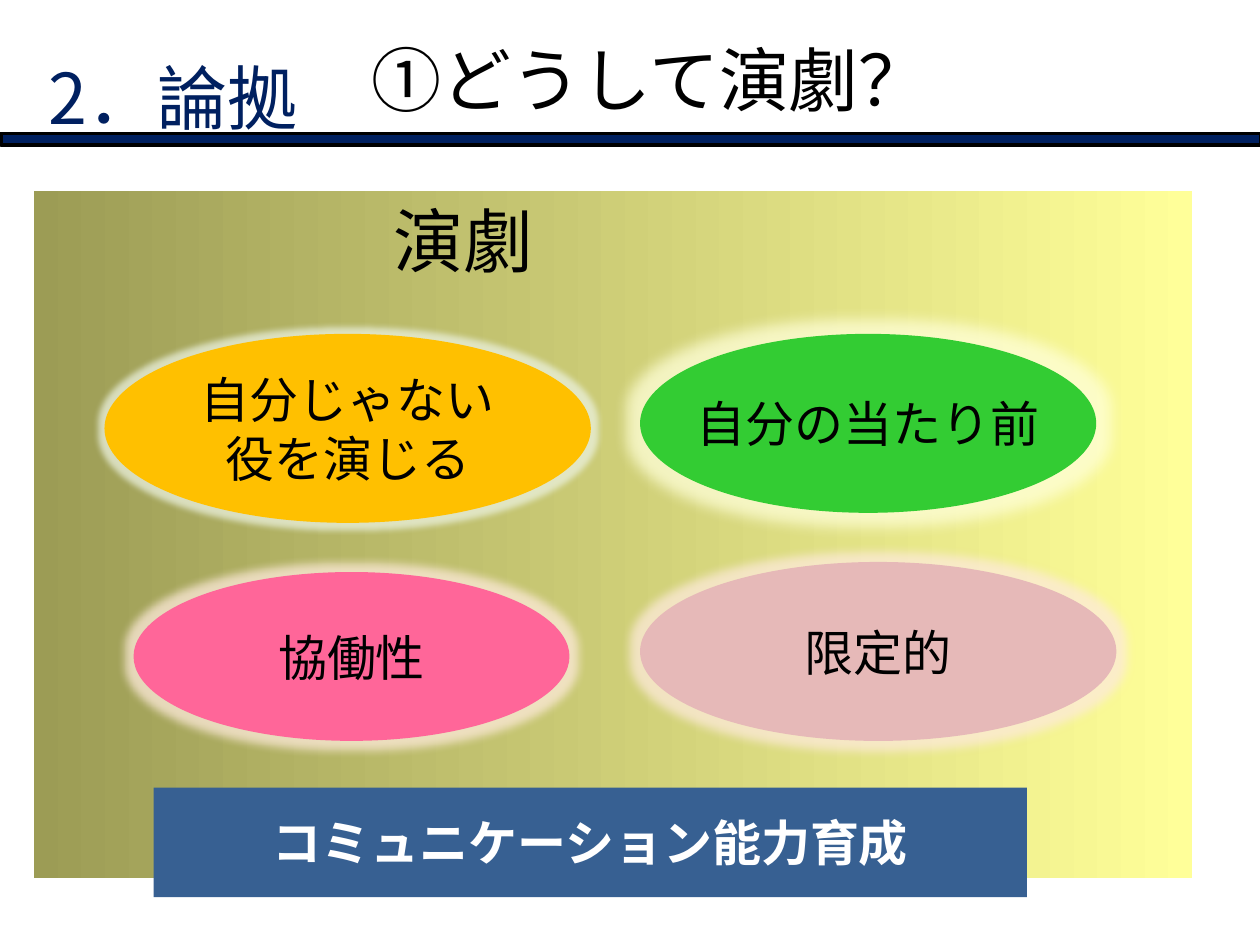
from lxml import etree
from pptx import Presentation
from pptx import util as u
from pptx.dml.color import RGBColor
from pptx.enum import shapes, text
from pptx.oxml.ns import qn

W, H = 10, 7.5
HUE = {
    "ink": "000000", "navy": "002060", "white": "FFFFFF", "blue": "376092",
    "olive": "9C9C55", "lemon": "FFFF99", "gold": "FFC000", "green": "33CC33",
    "pink": "FF6699", "rose": "E6B9B8", "cream": "FDEADA", "pale": "FFFFD9",
    "mist": "EBF1DE",
}
FONT = "Noto Sans CJK JP"
PAGE = (0, 0, W, H)
RECT, OVAL = shapes.MSO_SHAPE.RECTANGLE, shapes.MSO_SHAPE.OVAL


def rgb(name):
    return RGBColor.from_string(HUE[name])


def part(box, x, y, w, h):
    """Box in inches from percent shares of an outer box."""
    left, top, wide, high = box
    return (left + wide * x / 100, top + high * y / 100,
            wide * w / 100, high * h / 100)


def inch(box):
    return [u.Inches(n) for n in box]


def write(shape, words, size, hue="ink", font=FONT, bold=False, wrap=True):
    frame = shape.text_frame
    frame.text = words
    frame.word_wrap = wrap
    frame.auto_size = text.MSO_AUTO_SIZE.NONE
    frame.vertical_anchor = text.MSO_ANCHOR.MIDDLE
    for para in frame.paragraphs:
        para.alignment = text.PP_ALIGN.CENTER
        para.font.size = u.Pt(size)
        para.font.name = font
        para.font.bold = bold
        para.font.color.rgb = rgb(hue)
        if font == FONT:
            props = para.font._element
            etree.SubElement(props, qn("a:ea"), typeface=font)
    return frame


def draw(slide, kind, box, hue=None):
    shape = slide.shapes.add_shape(kind, *inch(box))
    shape.shadow.inherit = False
    shape.line.fill.background()
    if hue:
        shape.fill.solid()
        shape.fill.fore_color.rgb = rgb(hue)
    return shape


def glow(shape, hue, size):
    effects = shape._element.spPr.find(qn("a:effectLst"))
    node = etree.SubElement(effects, qn("a:glow"), rad=str(u.Pt(size)))
    color = etree.SubElement(node, qn("a:srgbClr"), val=HUE[hue])
    etree.SubElement(color, qn("a:alpha"), val="75000")


def header(slide, box):
    # Title
    title = slide.shapes.title
    title.left, title.top, title.width, title.height = inch(
        part(box, 18.5, 0, 66.2, 100))
    write(title, "①どうして演劇？", 40, font="Arial")
    # Section label
    label = slide.shapes.add_textbox(*inch(part(box, -1.2, 11.2, 29.9, 100)))
    write(label, "2．論拠", 40, "navy")
    # Rule
    rule = draw(slide, RECT, part(box, 0.1, 84.8, 100, 7.2), "navy")
    rule.line.color.rgb = rgb("ink")
    rule.line.width = u.Pt(2)


def panel(slide, box):
    # Gradient ground with its heading left of centre
    ground = draw(slide, RECT, box)
    ground.fill.gradient()
    ground.fill.gradient_angle = 0
    for stop, hue in zip(ground.fill.gradient_stops, ("olive", "lemon")):
        stop.color.rgb = rgb(hue)
    frame = write(ground, "演劇", 40)
    frame.vertical_anchor = text.MSO_ANCHOR.TOP
    frame.margin_right = u.Inches(2.47)

    # Glowing ovals
    ovals = [
        ("限定的", (52.34, 53.94, 41.13, 26.06), "rose", "cream", 11),
        ("自分の当たり前", (52.34, 20.73, 39.39, 26.06), "green", "pale", 16),
        ("協働性", (8.6, 55.41, 37.65, 24.59), "pink", "cream", 10),
        ("自分じゃない\n役を演じる", (6.09, 20.73, 42, 27.52), "gold", "mist", 7),
    ]
    for words, share, hue, halo, size in ovals:
        oval = draw(slide, OVAL, part(box, *share), hue)
        glow(oval, halo, size)
        write(oval, words, 28, wrap=False)

    # Banner
    banner = draw(slide, RECT, part(box, 10.34, 86.79, 75.41, 15.96), "blue")
    write(banner, "コミュニケーション能力育成", 28, "white", bold=True, wrap=False)


def main():
    deck = Presentation()
    deck.slide_width, deck.slide_height = u.Inches(W), u.Inches(H)
    slide = deck.slides.add_slide(deck.slide_layouts[5])
    header(slide, part(PAGE, 0, 0, 100, 16.67))
    panel(slide, part(PAGE, 2.7, 20.27, 91.9, 72.67))
    deck.save("out.pptx")


if __name__ == "__main__":
    main()
